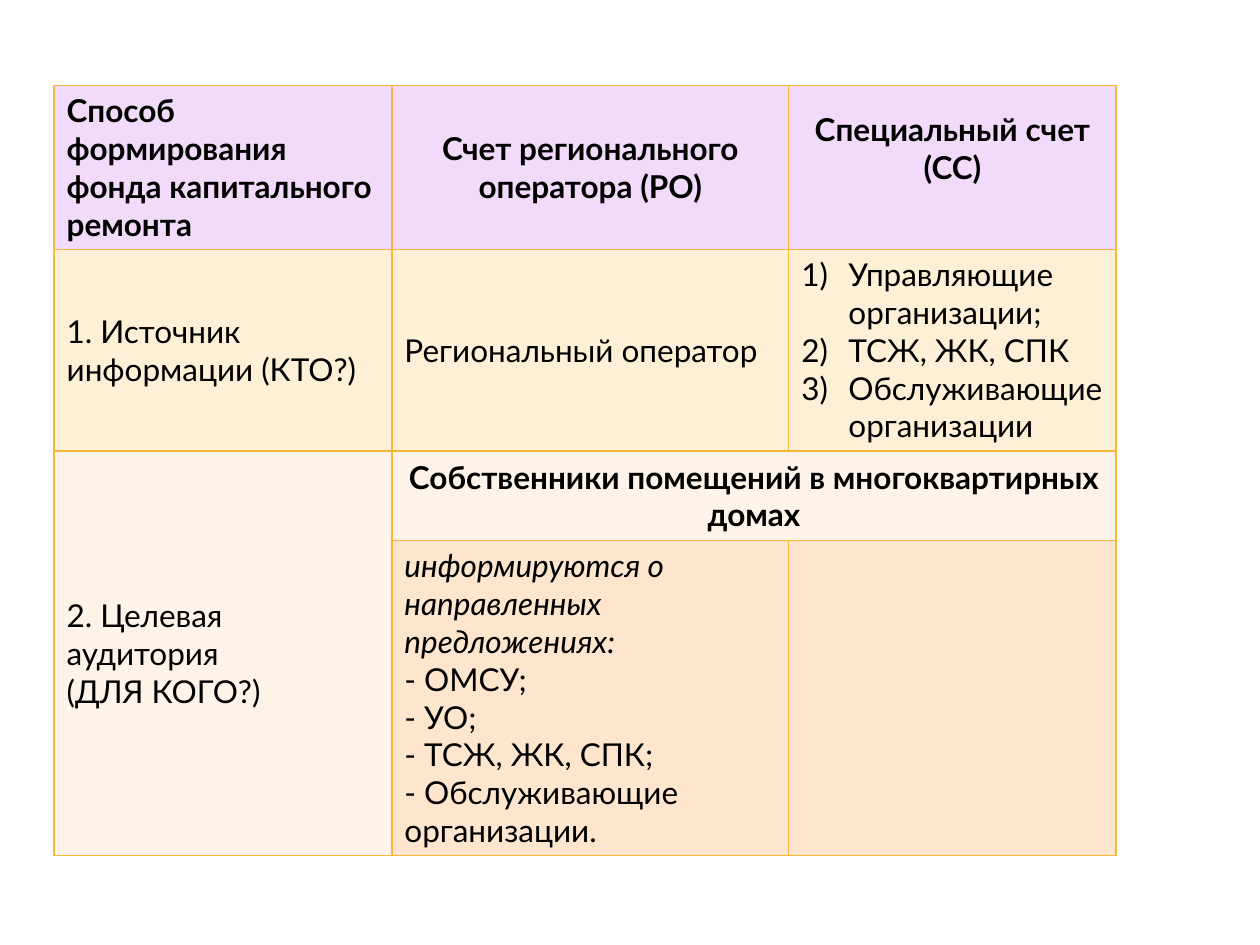
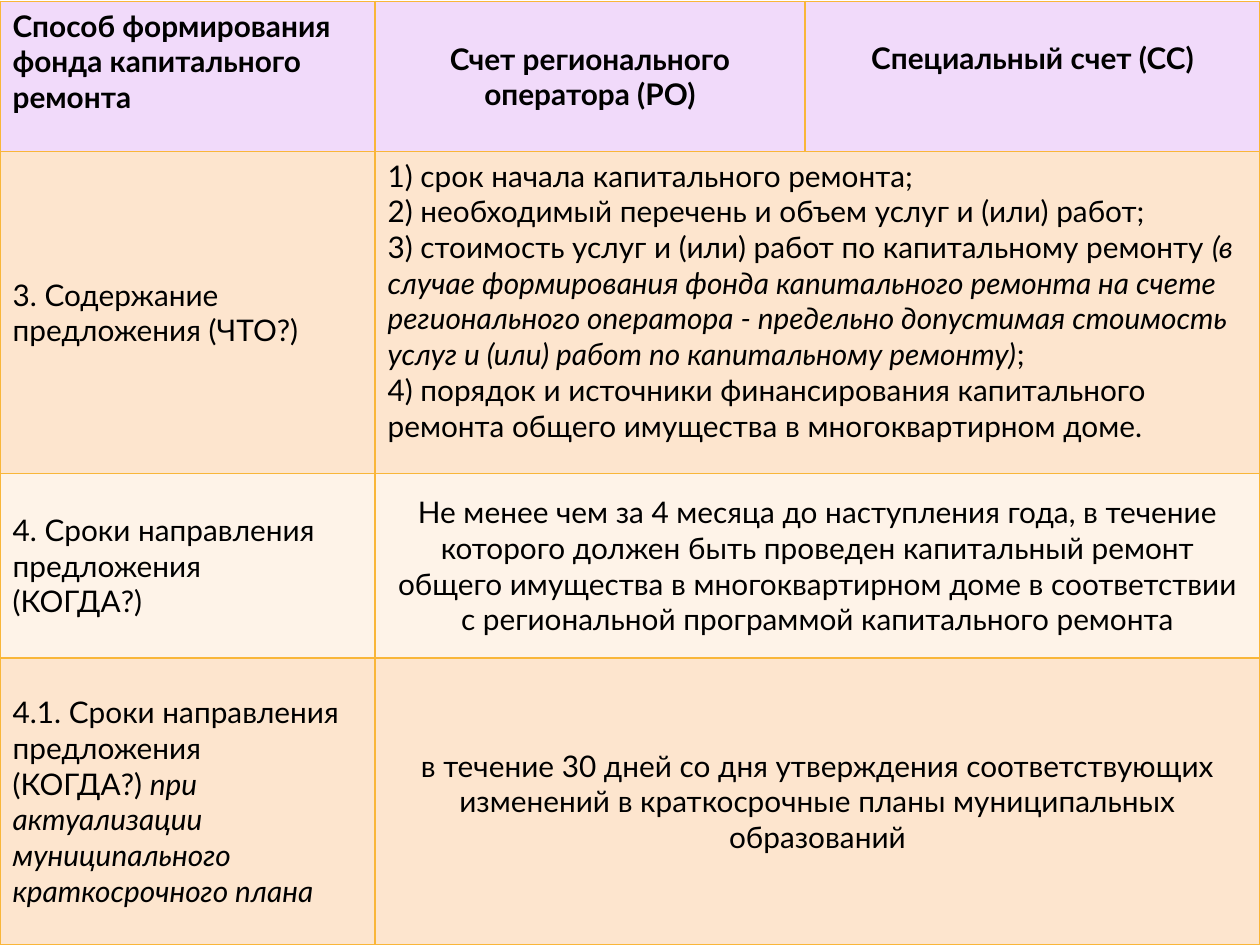
from dataclasses import dataclass
from pptx import Presentation
from pptx.dml.color import RGBColor
from pptx.enum.text import MSO_ANCHOR, PP_ALIGN
from pptx.oxml import parse_xml
from pptx.oxml.ns import nsdecls
from pptx.util import Cm, Pt

COLORS = {
    "header": "F1DAFA",
    "yellow": "FEF0D7",
    "light": "FEF3E8",
    "peach": "FDE5CE",
    "border": "F9B639",
    "text": "000000",
}
FONT = "Lato"
NUMBER_INDENT = Cm(0.95)


@dataclass
class Entry:
    """Content of one cell; text between asterisks is italic."""
    lines: tuple
    fill: str
    bold: bool = False
    centered: bool = False
    numbered: bool = False
    top: bool = False
    rows: int = 1
    columns: int = 1
    lift: float = 0  # extra bottom margin, cm


HEADER = [
    Entry(("Способ формирования фонда капитального ремонта",), "header", bold=True, top=True),
    Entry(("Счет регионального оператора (РО)",), "header", bold=True, centered=True),
    Entry(("Специальный счет (СС)",), "header", bold=True, centered=True, lift=0.75),
]

# None stands for a position covered by a merged cell
AUDIENCE_ROWS = [
    HEADER,
    [
        Entry(("1. Источник информации (КТО?)",), "yellow"),
        Entry(("Региональный оператор",), "yellow"),
        Entry(("Управляющие организации;", "ТСЖ, ЖК, СПК", "Обслуживающие организации"),
              "yellow", numbered=True),
    ],
    [
        Entry(("2. Целевая аудитория", "(ДЛЯ КОГО?)"), "light", rows=2),
        Entry(("Собственники помещений в многоквартирных домах",), "light",
              bold=True, centered=True, columns=2),
        None,
    ],
    [
        None,
        Entry(("*информируются о направленных предложениях:*", "- ОМСУ;", "- УО;",
               "- ТСЖ, ЖК, СПК;", "- Обслуживающие организации."), "peach"),
        Entry((), "peach"),
    ],
]

PROPOSAL_ROWS = [
    HEADER,
    [
        Entry(("3. Содержание предложения (ЧТО?)",), "peach"),
        Entry((
            "1) срок начала капитального ремонта;",
            "2) необходимый перечень и объем услуг и (или) работ;",
            "3) стоимость услуг и (или) работ по капитальному ремонту *(в случае формирования "
            "фонда капитального ремонта на счете регионального оператора - предельно допустимая "
            "стоимость услуг и (или) работ по капитальному ремонту)*;",
            "4) порядок и источники финансирования капитального ремонта общего имущества "
            "в многоквартирном доме.",
        ), "peach", top=True, columns=2),
        None,
    ],
    [
        Entry(("4. Сроки направления предложения", "(КОГДА?)"), "light"),
        Entry(("Не менее чем за 4 месяца до наступления года, в течение которого должен быть "
               "проведен капитальный ремонт общего имущества в многоквартирном доме "
               "в соответствии с региональной программой капитального ремонта",),
              "light", centered=True, columns=2),
        None,
    ],
    [
        Entry(("4.1. Сроки направления предложения",
               "(КОГДА?) *при актуализации муниципального краткосрочного плана*"), "peach"),
        Entry(("в течение 30 дней со дня утверждения соответствующих изменений "
               "в краткосрочные планы муниципальных образований",),
              "peach", centered=True, columns=2),
        None,
    ],
]


def add_borders(cell):
    """Draw the four edges; they must come before the cell fill."""
    properties = cell._tc.get_or_add_tcPr()
    for side in ("lnL", "lnR", "lnT", "lnB"):
        properties.append(parse_xml(
            f'<a:{side} {nsdecls("a")} w="{Pt(1)}"><a:solidFill>'
            f'<a:srgbClr val="{COLORS["border"]}"/></a:solidFill></a:{side}>'))


def add_number(paragraph):
    properties = paragraph._p.get_or_add_pPr()
    properties.set("marL", str(NUMBER_INDENT))
    properties.set("indent", str(-NUMBER_INDENT))
    properties.append(parse_xml(f'<a:buFont {nsdecls("a")} typeface="+mj-lt"/>'))
    properties.append(parse_xml(f'<a:buAutoNum {nsdecls("a")} type="arabicParenR"/>'))


def write_line(paragraph, line, entry, size):
    paragraph.alignment = PP_ALIGN.CENTER if entry.centered else PP_ALIGN.LEFT
    if entry.numbered:
        add_number(paragraph)
    font = paragraph.font
    font.name, font.size, font.bold = FONT, Pt(size), entry.bold
    font.color.rgb = RGBColor.from_string(COLORS["text"])
    for index, part in enumerate(line.split("*")):
        if part:
            run = paragraph.add_run()
            run.text = part
            run.font.italic = index % 2 == 1


def fill_cell(cell, entry, size):
    cell.fill.solid()
    cell.fill.fore_color.rgb = RGBColor.from_string(COLORS[entry.fill])
    cell.vertical_anchor = MSO_ANCHOR.TOP if entry.top else MSO_ANCHOR.MIDDLE
    cell.margin_bottom = Cm(0.13 + entry.lift)
    for index, line in enumerate(entry.lines):
        frame = cell.text_frame
        paragraph = frame.add_paragraph() if index else frame.paragraphs[0]
        write_line(paragraph, line, entry, size)


def add_table_slide(presentation, rows, left, top, widths, heights, size):
    slide = presentation.slides.add_slide(presentation.slide_layouts[6])
    table = slide.shapes.add_table(len(rows), len(widths), Cm(left), Cm(top),
                                   Cm(sum(widths)), Cm(sum(heights))).table
    table.first_row = table.horz_banding = False
    for column, width in zip(table.columns, widths):
        column.width = Cm(width)
    for row, height in zip(table.rows, heights):
        row.height = Cm(height)

    for r, entries in enumerate(rows):
        for c, entry in enumerate(entries):
            cell = table.cell(r, c)
            add_borders(cell)
            if entry is None:
                continue
            fill_cell(cell, entry, size)
            if entry.rows > 1 or entry.columns > 1:
                cell.merge(table.cell(r + entry.rows - 1, c + entry.columns - 1))


def main():
    presentation = Presentation()
    presentation.slide_width, presentation.slide_height = Cm(25.4), Cm(19.05)
    # Who informs whom
    add_table_slide(presentation, AUDIENCE_ROWS, 1.09, 1.72,
                    widths=(6.81, 8, 6.6), heights=(3.3, 4.05, 1.8, 6.35), size=18)
    # What is proposed and when
    add_table_slide(presentation, PROPOSAL_ROWS, 0, 0.03,
                    widths=(7.56, 8.67, 9.17), heights=(3.02, 6.5, 3.71, 5.79), size=17)
    presentation.save("out.pptx")


if __name__ == "__main__":
    main()
